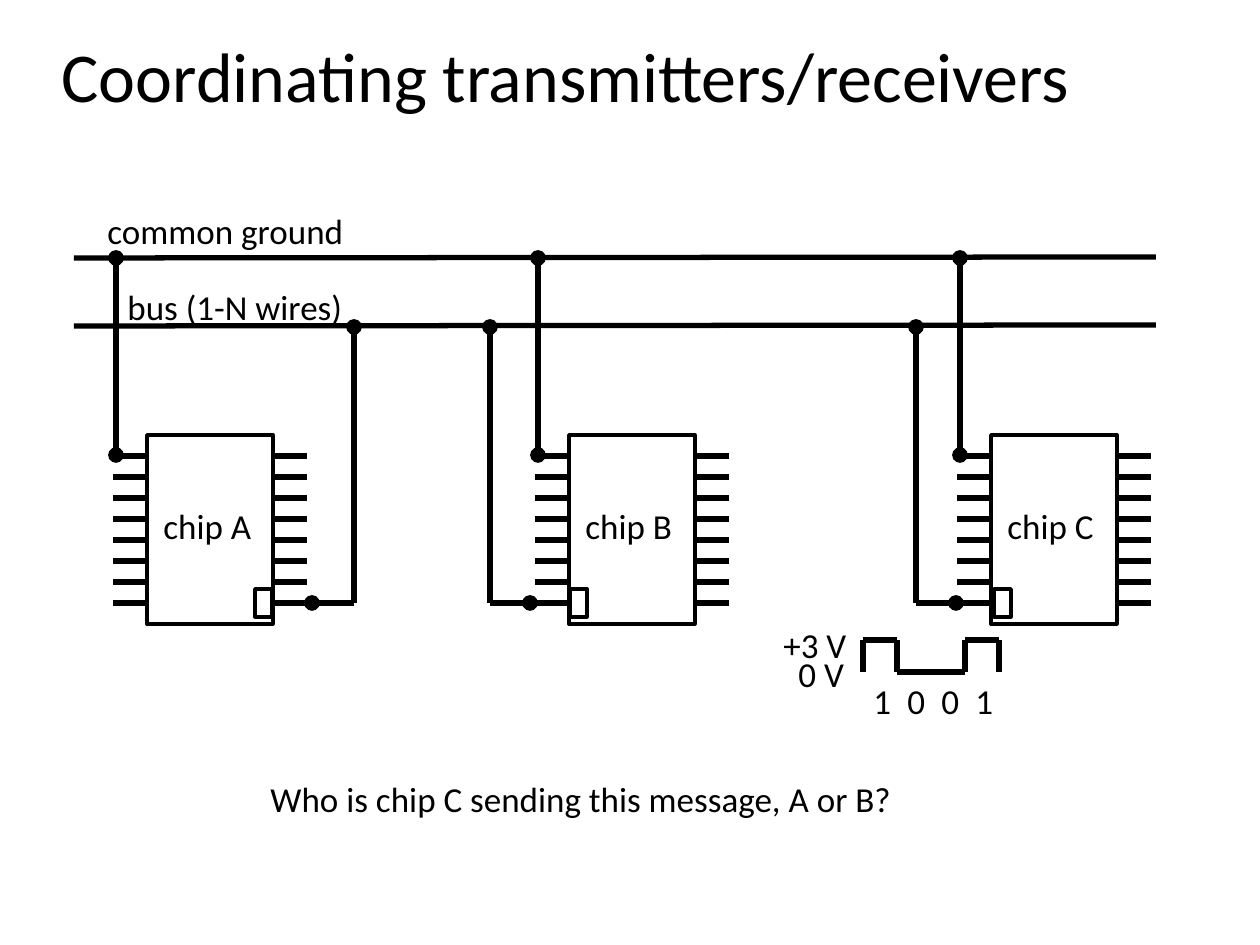
from pptx import Presentation
from pptx.dml.color import RGBColor
from pptx.enum.shapes import MSO_CONNECTOR, MSO_SHAPE
from pptx.enum.text import MSO_ANCHOR, MSO_AUTO_SIZE, PP_ALIGN
from pptx.oxml.ns import qn
from pptx.util import Pt
from lxml import etree

STRAIGHT = MSO_CONNECTOR.STRAIGHT
RECT = MSO_SHAPE.RECTANGLE
TOP = MSO_ANCHOR.TOP
FIXED = MSO_AUTO_SIZE.NONE
LEFT = PP_ALIGN.LEFT
SCALE = 914400 / 126
COLORS = {"ink": "000000", "paper": "FFFFFF"}


def px(n):
    return round(n * SCALE)


class Board:
    font = "Calibri"

    def __init__(self, deck):
        self.slide = deck.slides.add_slide(deck.slide_layouts[5])
        fill = self.slide.background.fill
        fill.solid()
        fill.fore_color.rgb = self.color("paper")

    def color(self, name):
        return RGBColor.from_string(COLORS[name])

    def label(self, shape, text, size):
        frame = shape.text_frame
        frame.word_wrap = True
        frame.auto_size = FIXED
        frame.vertical_anchor = TOP
        para = frame.paragraphs[0]
        para.alignment = LEFT
        run = para.add_run()
        run.text = text
        run.font.size = Pt(size)
        run.font.name = self.font
        run.font.color.rgb = self.color("ink")
        return para

    def title(self, text, x, y, w, h):
        shape = self.slide.shapes.title
        shape.left, shape.top, shape.width, shape.height = map(px, (x, y, w, h))
        self.label(shape, text, 40)

    def text(self, text, x, y, w, tab=0):
        box = self.slide.shapes.add_textbox(px(x), px(y), px(w), px(55))
        para = self.label(box, text, 20)
        if tab:
            props = para._p.get_or_add_pPr()
            stops = etree.SubElement(props, qn("a:tabLst"))
            for i in range(text.count("\t")):
                etree.SubElement(stops, qn("a:tab"), pos=str(px(tab * (i + 1))), algn="l")

    def rect(self, x, y, w, h):
        shape = self.slide.shapes.add_shape(RECT, px(x), px(y), px(w), px(h))
        shape.shadow.inherit = False
        shape.fill.background()
        shape.line.color.rgb = self.color("ink")
        shape.line.width = Pt(2)

    def line(self, x1, y1, x2, y2, head=False, tail=False):
        wire = self.slide.shapes.add_connector(STRAIGHT, px(x1), px(y1), px(x2), px(y2))
        wire.line.color.rgb = self.color("ink")
        wire.line.width = Pt(3)
        props = wire._element.spPr
        for tag, dot in (("a:headEnd", head), ("a:tailEnd", tail)):
            if dot:
                etree.SubElement(props.find(qn("a:ln")), qn(tag), type="oval")
        etree.SubElement(props, qn("a:effectLst"))

    def chip(self, name, x, y, port, tap, out):
        self.rect(x, y, 126, 189)
        for i in range(8):
            pin = y + 21 * (i + 1)
            self.line(x - 34, pin, x, pin)
            self.line(x + 126, pin, x + 160, pin)
        self.line(x - 31, y + 20, x - 31, 258, head=True, tail=True)
        self.text(f"chip {name}", x + 4, 498, 122)
        self.rect(port, 589, 17, 28)
        self.line(tap, 327, tap, 603, head=True)
        self.line(out, 603, tap, 603, head=True)

    def wave(self, x, y, step):
        for left in (x, x + 3 * step):
            self.line(left, y, left + step, y)
            for edge in (left, left + step):
                self.line(edge, y, edge, y + 32)
        for left in (x + step, x + 2 * step):
            self.line(left, y + 32, left + step, y + 32)


def main():
    deck = Presentation()
    deck.slide_width, deck.slide_height = px(1260), px(945)
    board = Board(deck)
    board.title("Coordinating transmitters/receivers", 49, 26, 1046, 97)
    for y in (258, 326):
        board.line(74, y, 1156, y - 1)
    board.text("common ground", 95, 203, 284)
    board.text("bus (1-N wires)", 115, 279, 284)
    plan = (("A", 255, 354, 312), ("B", 570, 490, 530), ("C", 994, 916, 956))
    for i, (name, port, tap, out) in enumerate(plan):
        board.chip(name, 147 + 422 * i, 435, port, tap, out)
    board.wave(863, 640, 34)
    board.text("1\t0\t0\t1", 861, 673, 152, tab=34)
    board.text("0 V", 786, 646, 74)
    board.text("+3 V", 771, 617, 92)
    board.text("Who is chip C sending this message, A or B?", 258, 771, 675)
    deck.save("out.pptx")


if __name__ == "__main__":
    main()
